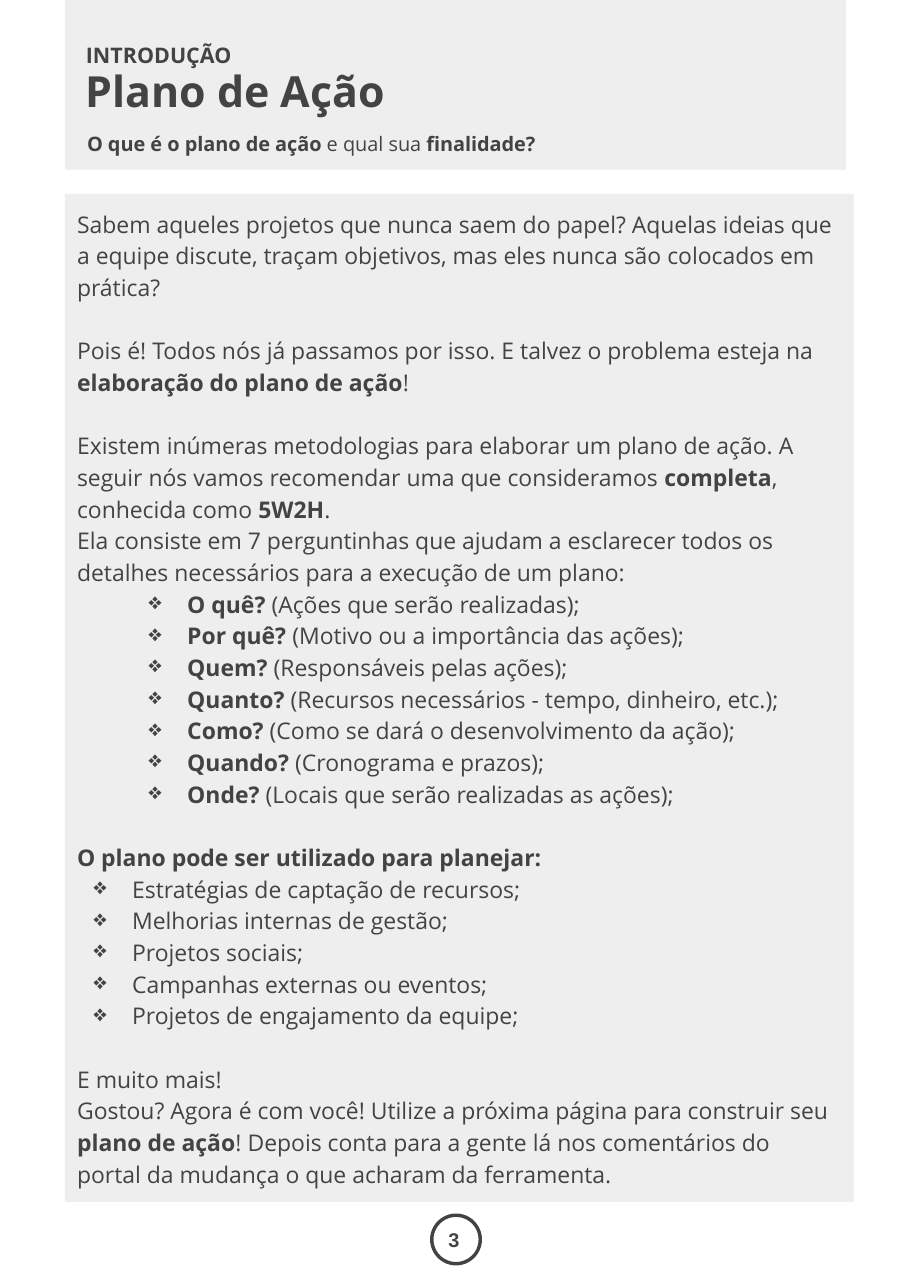
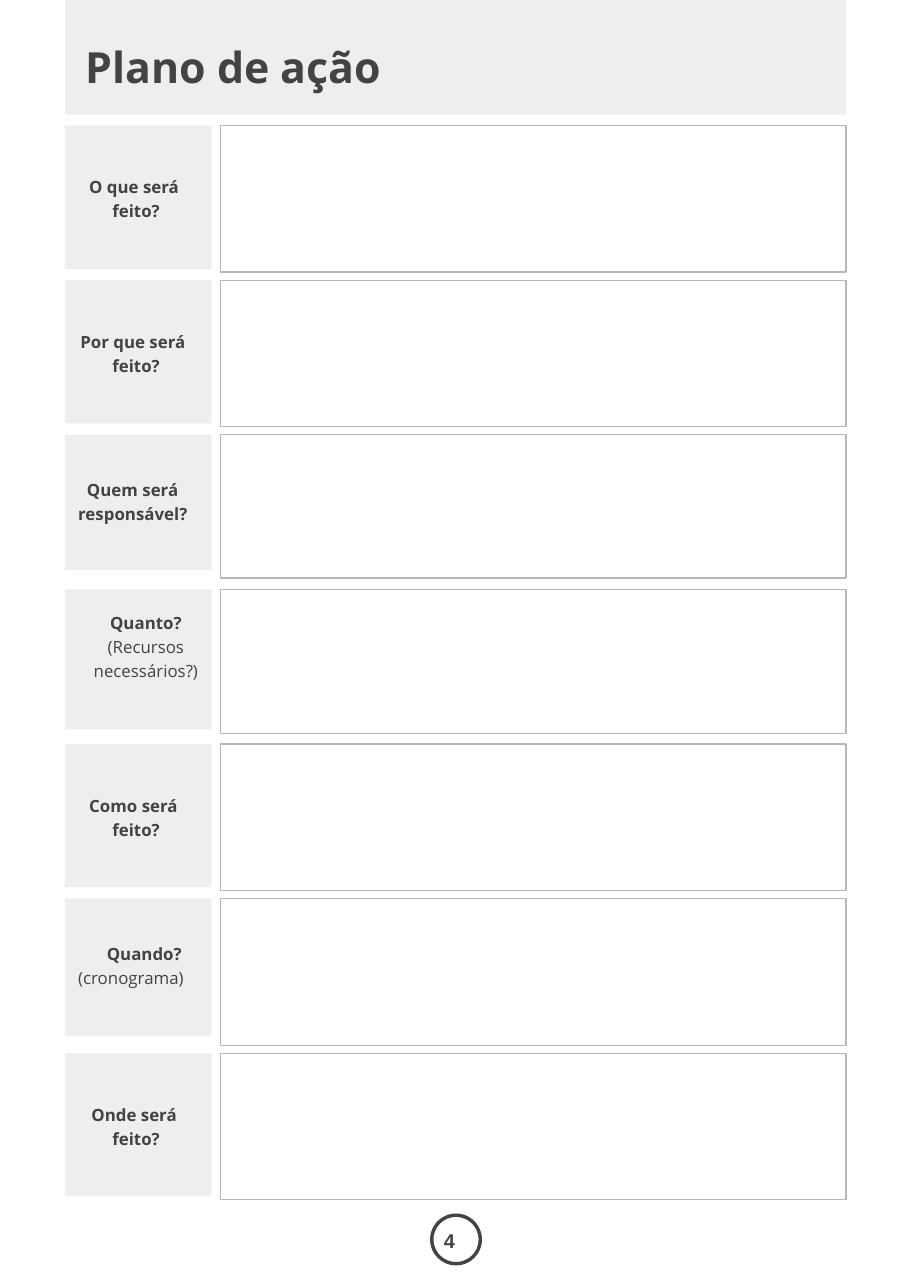
"""Builds the two-page action plan handout: an introduction and a form to fill in."""
from dataclasses import dataclass

from lxml.etree import SubElement
from pptx import Presentation
from pptx.dml.color import RGBColor
from pptx.enum.shapes import MSO_SHAPE
from pptx.enum.text import MSO_ANCHOR, PP_ALIGN
from pptx.oxml.ns import qn
from pptx.util import Inches, Pt


@dataclass(frozen=True)
class Theme:
    ink: str = "434343"
    panel: str = "EEEEEE"
    frame: str = "B7B7B7"
    font: str = "Open Sans"
    number_font: str = "Arial"
    title: float = 28
    kicker: float = 14
    body: float = 15
    small: float = 13
    label: float = 11
    bullet: str = "❖"
    body_gap: float = 20.7


THEME = Theme()
PAGE_W, PAGE_H = 8.27, 11.69
LEFT, BAND_W = 0.59, 7.09
HEADING_X = 0.77
BADGE = (3.92, 11.03, 0.44, 0.44)

PLAIN = {}
SPACED = {"before": THEME.body_gap}
DEEP = {"margin": 1, "indent": -0.35, "bullet": True}
SHALLOW = {"margin": 0.5, "indent": -0.35, "bullet": True}

INTRODUCTION = [
    (PLAIN, ["Sabem aqueles projetos que nunca saem do papel? Aquelas ideias que a equipe discute, "
             "traçam objetivos, mas eles nunca são colocados em prática?"]),
    (SPACED, ["Pois é! Todos nós já passamos por isso. E talvez o problema esteja na "
              "**elaboração do plano de ação**!",
              "Existem inúmeras metodologias para elaborar um plano de ação. A seguir nós vamos "
              "recomendar uma que consideramos **completa**, conhecida como **5W2H**."]),
    (PLAIN, ["Ela consiste em 7 perguntinhas que ajudam a esclarecer todos os detalhes necessários "
             "para a execução de um plano:"]),
    (DEEP, ["**O quê? **(Ações que serão realizadas);",
            "**Por quê? **(Motivo ou a importância das ações);",
            "**Quem? **(Responsáveis pelas ações);",
            "**Quanto? **(Recursos necessários - tempo, dinheiro, etc.);",
            "**Como? **(Como se dará o desenvolvimento da ação);",
            "**Quando? **(Cronograma e prazos);",
            "**Onde? **(Locais que serão realizadas as ações);"]),
    (SPACED, ["**O plano pode ser utilizado para planejar:**"]),
    (SHALLOW, ["Estratégias de captação de recursos;",
               "Melhorias internas de gestão;",
               "Projetos sociais;",
               "Campanhas externas ou eventos;",
               "Projetos de engajamento da equipe;"]),
    (SPACED, ["E muito mais!"]),
    (PLAIN, ["Gostou? Agora é com você! Utilize a próxima página para construir seu "
             "**plano de ação**! Depois conta para a gente lá nos comentários do portal da mudança "
             "o que acharam da ferramenta."]),
]

HANGING = {"margin": 0.43, "indent": -0.21}
QUESTIONS = [
    ("**O que será feito?**", 1.3, 1.33, 0.43, HANGING),
    ("**Por que será feito?**", 1.3, 1.33, 0.43, {"margin": 0.43, "indent": -0.29}),
    ("**Quem será responsável?**", 1.23, 1.3, 0.37, {"margin": 0.12, "indent": 0.08}),
    ("**Quanto? **(Recursos necessários?)", 1.27, 1.31, 0.18,
     {"margin": 0.14, "align": PP_ALIGN.CENTER}),
    ("**Como será feito?**", 1.3, 1.33, 0.43, HANGING),
    ("**Quando? **(cronograma)", 1.25, 1.33, 0.37, {"margin": 0.12, "indent": 0.26}),
    ("**Onde será feito?**", 1.3, 1.33, 0.43, {"margin": 0.43, "indent": -0.19}),
]
FORM_TOP, ROW_PITCH = 1.14, 1.4033
LABEL_W, ANSWER_X = 1.33, 2.0


def write(paragraph, text, size=THEME.body, font=THEME.font, spacing=None, before=0,
          margin=0, indent=0, bullet=False, align=PP_ALIGN.LEFT):
    paragraph.alignment = align
    paragraph.space_before = Pt(before)
    if spacing:
        paragraph.line_spacing = spacing
    properties = paragraph._p.get_or_add_pPr()
    properties.set("marL", str(Inches(margin)))
    properties.set("indent", str(Inches(indent)))
    if bullet:
        colour = SubElement(properties, qn("a:buClr"))
        SubElement(colour, qn("a:srgbClr"), val=THEME.ink)
        SubElement(properties, qn("a:buChar"), char=THEME.bullet)
    for position, part in enumerate(text.split("**")):
        if part:
            run = paragraph.add_run()
            run.text = part
            run.font.size = Pt(size)
            run.font.name = font
            run.font.bold = position % 2 == 1
            run.font.color.rgb = RGBColor.from_string(THEME.ink)


def prepare(frame, top=0.01):
    frame.word_wrap = True
    frame.vertical_anchor = MSO_ANCHOR.TOP
    frame.margin_left = frame.margin_right = frame.margin_bottom = 0
    frame.margin_top = Inches(top)
    return frame


def text_area(slide, box, top=0.01):
    return prepare(slide.shapes.add_textbox(*map(Inches, box)).text_frame, top)


def block(slide, box, fill=None, line=None, width=0.75, kind=MSO_SHAPE.RECTANGLE):
    shape = slide.shapes.add_shape(kind, *map(Inches, box))
    shape.shadow.inherit = False
    if fill:
        shape.fill.solid()
        shape.fill.fore_color.rgb = RGBColor.from_string(fill)
    else:
        shape.fill.background()
    if line:
        shape.line.color.rgb = RGBColor.from_string(line)
        shape.line.width = Pt(width)
    else:
        shape.line.fill.background()
    return shape


def new_page(deck, title, title_top, band_height, number, number_at):
    slide = deck.slides.add_slide(deck.slide_layouts[6])
    block(slide, BADGE, line=THEME.ink, width=2.25, kind=MSO_SHAPE.OVAL)
    block(slide, (LEFT, 0, BAND_W, band_height), fill=THEME.panel)
    heading = text_area(slide, (HEADING_X, title_top, 6.23, 0.49))
    write(heading.paragraphs[0], f"**{title}**", size=THEME.title, margin=0.01)
    badge = text_area(slide, (*number_at, 0.29, 0.25), top=0.03)
    write(badge.paragraphs[0], f"**{number}**", size=THEME.small,
          font=THEME.number_font, margin=0.04)
    return slide


def introduction_page(deck):
    slide = new_page(deck, "Plano de Ação", 0.58, 1.54, 3, (4.03, 11.11))
    kicker = text_area(slide, (HEADING_X, 0.37, 1.62, 0.25))
    write(kicker.paragraphs[0], "**INTRODUÇÃO**", size=THEME.kicker, margin=0.01)
    question = text_area(slide, (0.79, 1.19, 6.69, 0.22), top=0)
    write(question.paragraphs[0], "**O que é o plano de ação **e qual sua **finalidade?**",
          size=THEME.small)
    block(slide, (LEFT, 1.76, 7.16, 9.15), fill=THEME.panel)
    story = text_area(slide, (0.7, 1.86, 6.87, 9.22))
    passages = [(text, style) for style, texts in INTRODUCTION for text in texts]
    for index, (text, style) in enumerate(passages):
        paragraph = story.add_paragraph() if index else story.paragraphs[0]
        write(paragraph, text, spacing=1.15, **style)


def form_page(deck):
    slide = new_page(deck, "Plano de ação", 0.36, 1.04, 4, (3.99, 11.12))
    for row, (question, label_h, answer_h, inset, style) in enumerate(QUESTIONS):
        top = FORM_TOP + row * ROW_PITCH
        label = block(slide, (LEFT, top, LABEL_W, label_h), fill=THEME.panel)
        write(prepare(label.text_frame, inset).paragraphs[0], question,
              size=THEME.label, spacing=1.19, **style)
        block(slide, (ANSWER_X, top, LEFT + BAND_W - ANSWER_X, answer_h), line=THEME.frame)


def main():
    deck = Presentation()
    deck.slide_width, deck.slide_height = Inches(PAGE_W), Inches(PAGE_H)
    introduction_page(deck)
    form_page(deck)
    deck.save("out.pptx")


if __name__ == "__main__":
    main()
